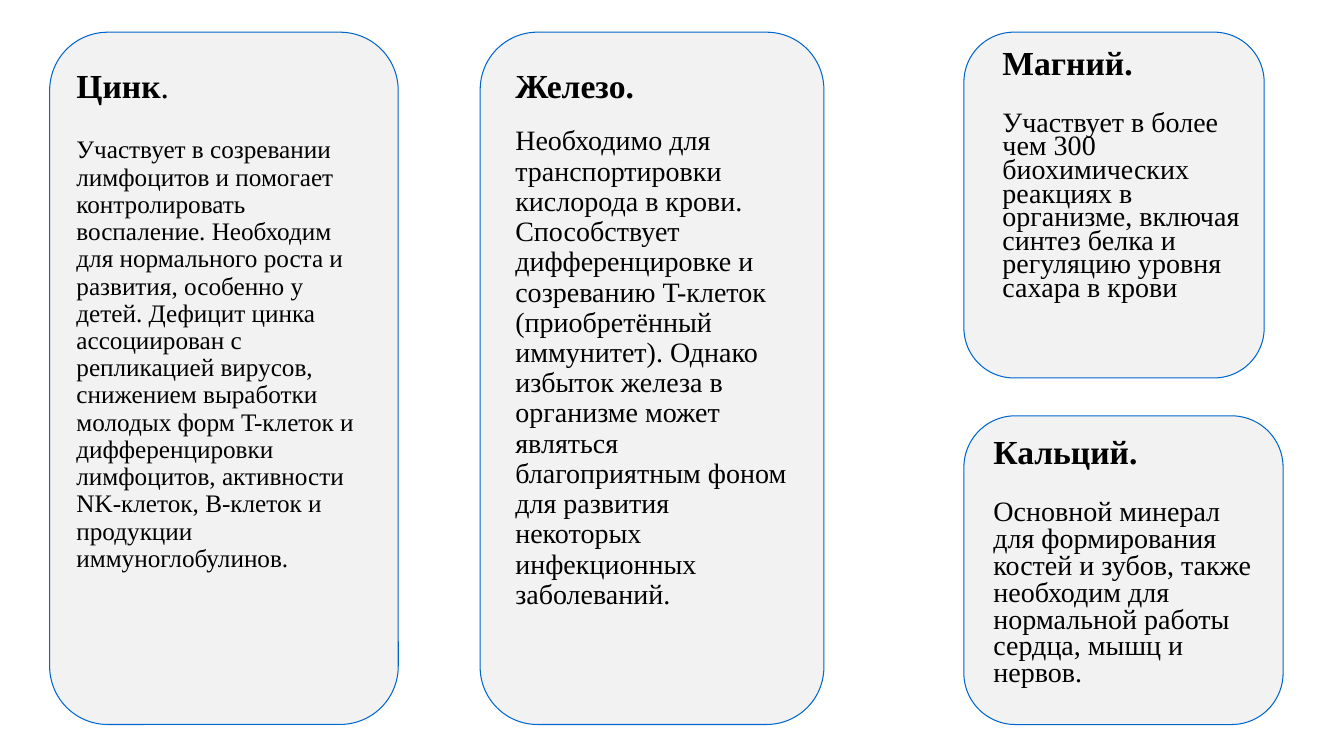
from dataclasses import dataclass

from pptx import Presentation
from pptx.dml.color import RGBColor
from pptx.enum.shapes import MSO_SHAPE
from pptx.util import Pt

ROUND = MSO_SHAPE.ROUNDED_RECTANGLE
BLANK = 6
FONT = "Times New Roman"
COLORS = {"fill": "F2F2F2", "line": "0066CC", "text": "000000"}


@dataclass
class Box:
    left: float
    top: float
    width: float
    height: float


@dataclass
class Card:
    frame: Box
    area: Box
    head: str
    body: str
    size: float
    ratio: float
    gap: float
    bold_dot: bool = True


CARDS = [
    Card(Box(35.5, 23, 249, 494.5), Box(47.5, 46, 226, 459), "Цинк",
         "Участвует в созревании лимфоцитов и помогает контролировать "
         "воспаление. Необходим для нормального роста и развития, особенно "
         "у детей. Дефицит цинка ассоциирован с репликацией вирусов, "
         "снижением выработки молодых форм T-клеток и дифференцировки "
         "лимфоцитов, активности NK-клеток, B-клеток и продукции "
         "иммуноглобулинов.", 18, 0.9, 22.5, bold_dot=False),
    Card(Box(343, 23, 245.5, 494.5), Box(361, 46, 214.5, 437), "Железо",
         "Необходимо для транспортировки кислорода в крови. Способствует "
         "дифференцировке и созреванию T-клеток (приобретённый иммунитет). "
         "Однако избыток железа в организме может являться благоприятным "
         "фоном для развития некоторых инфекционных заболеваний.",
         20, 0.9, 15),
    Card(Box(688.5, 297, 228, 220.5), Box(702.5, 310, 201.5, 207), "Кальций",
         "Основной минерал для формирования костей и зубов, также необходим "
         "для нормальной работы сердца, мышц и нервов.", 20, 0.8, 20.5),
    Card(Box(688.5, 23, 214.5, 247), Box(709, 34, 188, 236), "Магний",
         "Участвует в более чем 300 биохимических реакциях в организме, "
         "включая синтез белка и регуляцию уровня сахара в крови",
         20, 0.7, 23.5),
]


def place(box: Box) -> list[Pt]:
    return [Pt(n) for n in (box.left, box.top, box.width, box.height)]


def color(name: str) -> RGBColor:
    return RGBColor.from_string(COLORS[name])


def write(para, text: str, *, size: float, bold: bool = False) -> None:
    run = para.add_run()
    run.text = text
    run.font.name = FONT
    run.font.size = Pt(size)
    run.font.bold = bold
    run.font.color.rgb = color("text")


def draw_frame(slide, box: Box) -> None:
    shape = slide.shapes.add_shape(ROUND, *place(box))
    shape.shadow.inherit = False
    shape.fill.solid()
    shape.fill.fore_color.rgb = color("fill")
    shape.line.color.rgb = color("line")
    shape.line.width = Pt(0.75)


def draw_text(slide, card: Card) -> None:
    frame = slide.shapes.add_textbox(*place(card.area)).text_frame
    frame.word_wrap = True
    head, body = frame.paragraphs[0], frame.add_paragraph()
    head.line_spacing = body.line_spacing = card.ratio
    body.space_before = Pt(card.gap)
    write(head, card.head, size=24, bold=True)
    write(head, ".", size=24, bold=card.bold_dot)
    write(body, card.body, size=card.size)


def main() -> None:
    deck = Presentation()
    deck.slide_width, deck.slide_height = Pt(960), Pt(540)
    slide = deck.slides.add_slide(deck.slide_layouts[BLANK])
    for card in CARDS:
        draw_frame(slide, card.frame)
        draw_text(slide, card)
    deck.save("out.pptx")


if __name__ == "__main__":
    main()
